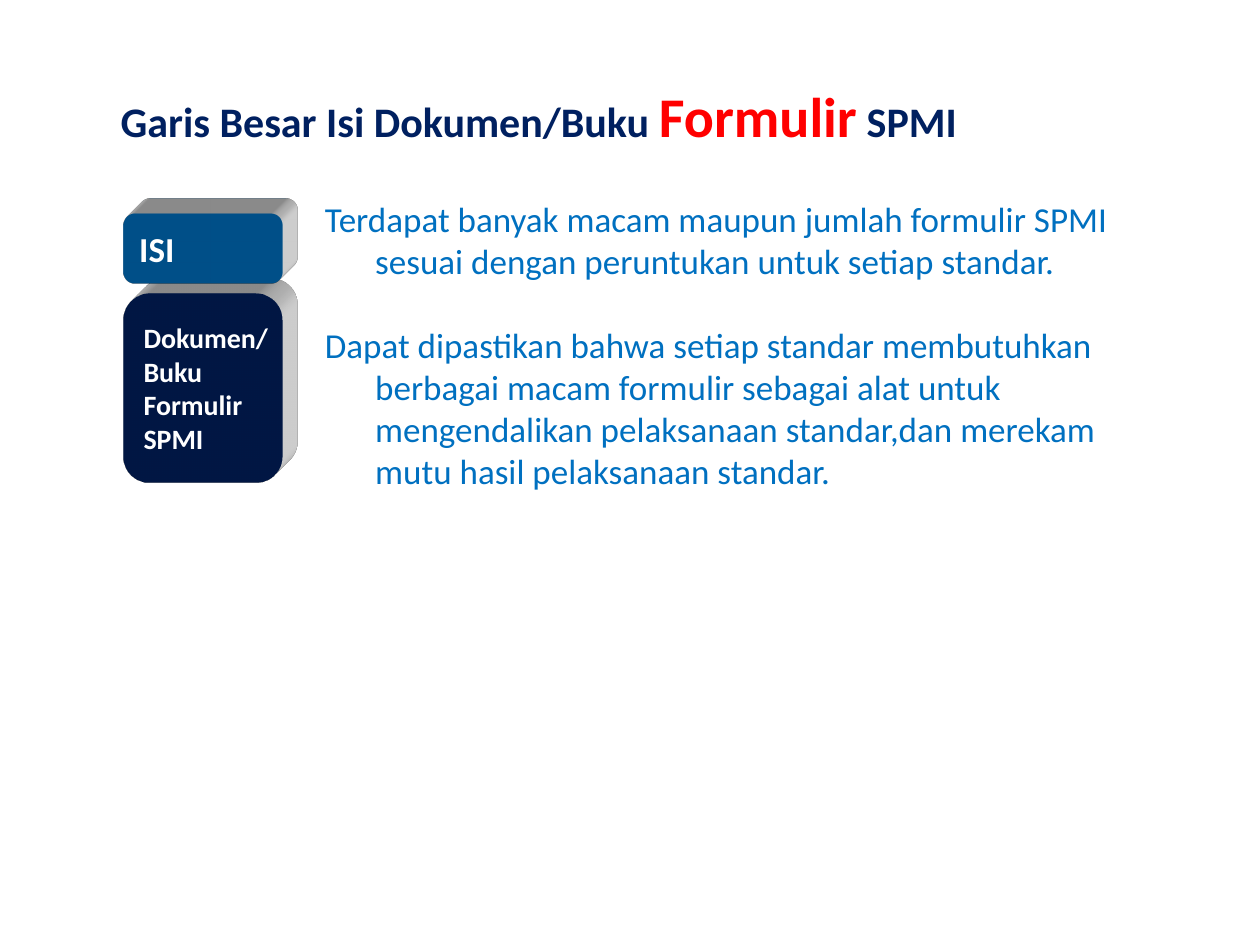
from lxml.etree import SubElement
from pptx import Presentation
from pptx.dml.color import RGBColor as Color
from pptx.enum.shapes import MSO_SHAPE as Shape
from pptx.enum.text import MSO_ANCHOR as Anchor, MSO_AUTO_SIZE as AutoSize
from pptx.oxml.ns import qn
from pptx.util import Inches, Pt

TITLE = [[
    ("Garis Besar Isi Dokumen/Buku ", "navy", "title"),
    ("Formulir", "red", "accent"),
    (" SPMI", "navy", "title"),
]]
BODY = [
    "Terdapat banyak macam maupun jumlah formulir SPMI sesuai dengan peruntukan untuk setiap standar.",
    "Dapat dipastikan bahwa setiap standar membutuhkan berbagai macam formulir sebagai alat untuk "
    "mengendalikan pelaksanaan standar,dan merekam mutu hasil pelaksanaan standar.",
]
BLOCKS = [
    (["Dokumen/", "Buku", "Formulir", "SPMI"], 2.33, 1.5, "navy", "label"),
    (["ISI"], 1.7, 0.55, "blue", "body"),
]
THEME = {
    "font": "Calibri",
    "colors": {"navy": "002060", "blue": "0070C0", "red": "FF0000",
               "white": "FFFFFF", "side": "EAEAEA"},
    "sizes": {"title": 24, "accent": 32, "body": 20, "label": 16},
}
BLOCK_LEFT, BLOCK_WIDTH = 0.98, 1.26
DEPTH = 0.34


def color(name):
    return Color.from_string(THEME["colors"][name])


def write(box, paragraphs, bold=False, wrap=False, hanging=0, gap=0):
    frame = box.text_frame
    frame.word_wrap = wrap
    for index, spans in enumerate(paragraphs):
        para = frame.add_paragraph() if index else frame.paragraphs[0]
        properties = para._p.get_or_add_pPr()
        properties.set("algn", "l")
        if hanging:
            properties.set("marL", str(Inches(hanging)))
            properties.set("indent", str(-Inches(hanging)))
        if index and gap:
            para.space_before = Pt(gap)
        for text, tint, size in spans:
            span = para.add_run()
            span.text = text
            span.font.name = THEME["font"]
            span.font.size = Pt(THEME["sizes"][size])
            span.font.bold = bold
            span.font.color.rgb = color(tint)


def extrude(box):
    properties = box._element.spPr
    scene = SubElement(properties, qn("a:scene3d"))
    SubElement(scene, qn("a:camera"), prst="legacyObliqueTopRight")
    SubElement(scene, qn("a:lightRig"), rig="legacyFlat3", dir="b")
    solid = SubElement(properties, qn("a:sp3d"), extrusionH=str(Inches(DEPTH)),
                       prstMaterial="legacyMatte")
    side = SubElement(solid, qn("a:extrusionClr"))
    SubElement(side, qn("a:srgbClr"), val=THEME["colors"]["side"])


def add_block(page, lines, top, height, fill, size):
    box = page.shapes.add_shape(
        Shape.FLOWCHART_ALTERNATE_PROCESS,
        *map(Inches, (BLOCK_LEFT, top, BLOCK_WIDTH, height)))
    box.shadow.inherit = False
    box.fill.solid()
    box.fill.fore_color.rgb = color(fill)
    box.line.fill.background()
    box.text_frame.vertical_anchor = Anchor.MIDDLE
    write(box, [[(line, "white", size)] for line in lines], bold=True)
    extrude(box)


def add_text(page, place, paragraphs, **style):
    box = page.shapes.add_textbox(*map(Inches, place))
    box.text_frame.auto_size = AutoSize.SHAPE_TO_FIT_TEXT
    write(box, paragraphs, **style)


def main():
    deck = Presentation()
    deck.slide_width, deck.slide_height = Inches(10), Inches(7.5)
    page = deck.slides.add_slide(deck.slide_layouts[6])
    for block in BLOCKS:
        add_block(page, *block)
    add_text(page, (0.86, 0.6, 6.9, 0.64), TITLE, bold=True)
    add_text(page, (2.48, 1.52, 6.93, 2.46),
             [[(text, "blue", "body")] for text in BODY],
             wrap=True, hanging=0.4, gap=THEME["sizes"]["body"] * 1.2)
    deck.save("out.pptx")


if __name__ == "__main__":
    main()
